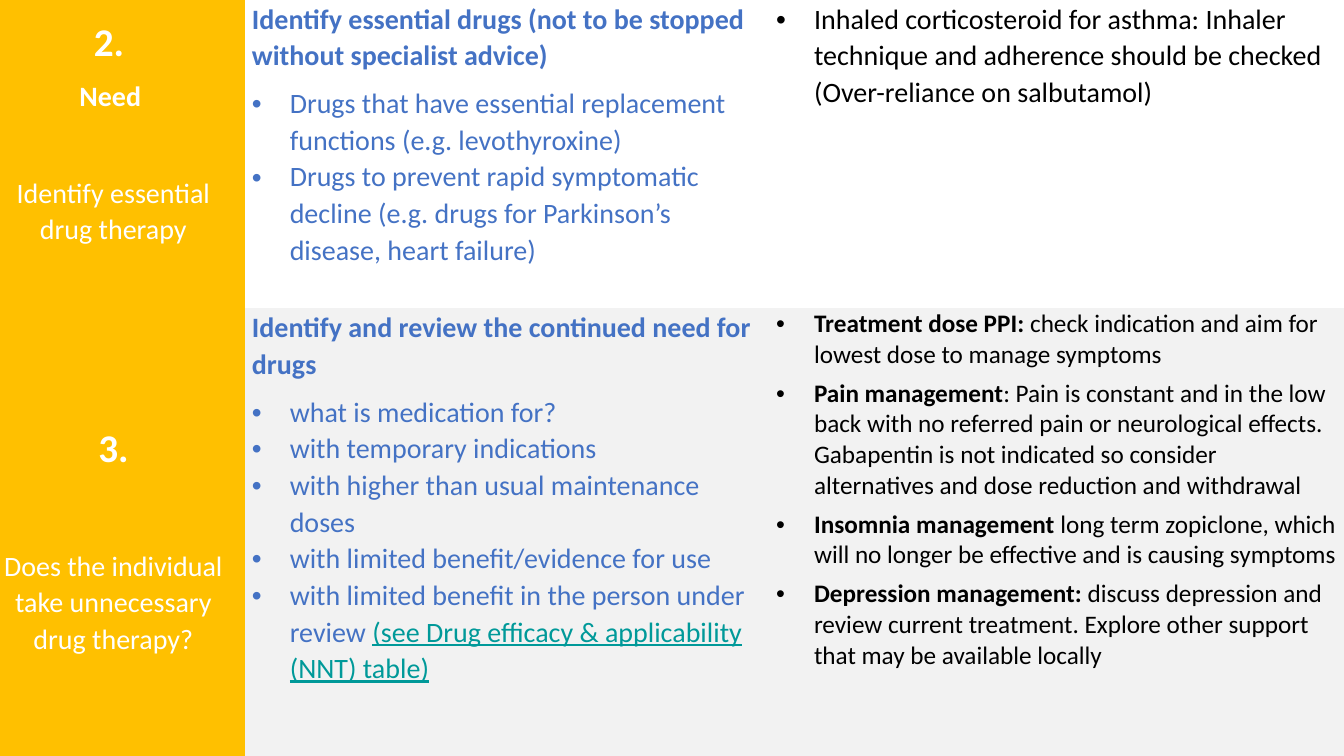
from dataclasses import dataclass
from lxml.etree import SubElement
from pptx import Presentation
from pptx.dml.color import RGBColor as RGB
from pptx.enum.text import PP_ALIGN as Align
from pptx.oxml.ns import qn
from pptx.util import Pt


@dataclass(frozen=True)
class Theme:
    font: str = "Calibri"
    gold: str = "FFC000"
    white: str = "FFFFFF"
    grey: str = "F2F2F2"
    blue: str = "4472C4"
    teal: str = "009999"
    black: str = "000000"
    number: int = 28
    body: int = 20
    detail: int = 18
    lead: float = 1.07
    hang: int = 27


THEME = Theme()
PLAIN_GRID = "{2D5ABB26-0587-4C30-8999-92F81FD0307C}"
WIDTHS = (188, 374.5, 411)
HEIGHTS = (220.3, 350.7)

STEPS = (
    (11.5, (("2. ", THEME.number, True, 7),
            ("Need ", THEME.body, True, 43),
            ("Identify essential drug therapy", THEME.body, False, 0))),
    (81, (("3.", THEME.number, True, 53),
          ("Does the individual take unnecessary drug therapy?", THEME.body, False, 0))),
)
ACTIONS = (
    ("Identify essential drugs (not to be stopped without specialist advice)",
     ("Drugs that have essential replacement functions (e.g. levothyroxine)",
      "Drugs to prevent rapid symptomatic decline (e.g. drugs for Parkinson’s disease, heart failure)"),
     None),
    ("Identify and review the continued need for drugs",
     ("what is medication for?",
      "with temporary indications",
      "with higher than usual maintenance doses",
      "with limited benefit/evidence for use",
      "with limited benefit in the person under review "),
     "(see Drug efficacy & applicability (NNT) table)"),
)
INHALER = ("Inhaled corticosteroid for asthma: Inhaler technique and adherence "
           "should be checked (Over-reliance on salbutamol)")
REVIEWS = (
    ("Treatment dose PPI: ", "check indication and aim for lowest dose to manage symptoms"),
    ("Pain management", ": Pain is constant and in the low back with no referred pain or "
     "neurological effects. Gabapentin is not indicated so consider alternatives and dose "
     "reduction and withdrawal"),
    ("Insomnia management ", "long term zopiclone, which will no longer be effective and is "
     "causing symptoms"),
    ("Depression management: ", "discuss depression and review current treatment. Explore "
     "other support that may be available locally"),
)


def add_table(slide):
    frame = slide.shapes.add_table(2, 3, Pt(-13), Pt(0), Pt(sum(WIDTHS)), Pt(sum(HEIGHTS)))
    table = frame.table
    table.first_row = table.horz_banding = False
    table._tbl.tblPr.find(qn("a:tableStyleId")).text = PLAIN_GRID
    for column, width in zip(table.columns, WIDTHS):
        column.width = Pt(width)
    for row, height in zip(table.rows, HEIGHTS):
        row.height = Pt(height)
    return table


def style_cell(cell, color, top=0):
    cell.fill.solid()
    cell.fill.fore_color.rgb = RGB.from_string(color)
    cell.margin_left = cell.margin_right = Pt(5)
    cell.margin_top, cell.margin_bottom = Pt(top), Pt(0)


def add_para(cell, first=False, lead=THEME.lead, before=0, after=0, align=Align.LEFT):
    frame = cell.text_frame
    para = frame.paragraphs[0] if first else frame.add_paragraph()
    para.alignment = align
    para.line_spacing = lead
    para.space_before = Pt(0 if first else before)
    para.space_after = Pt(after)
    return para


def add_bullet(cell, color, **spacing):
    para = add_para(cell, **spacing)
    props = para._p.get_or_add_pPr()
    props.set("marL", str(Pt(THEME.hang)))
    props.set("indent", str(-Pt(THEME.hang)))
    tint = SubElement(props, qn("a:buClr"))
    SubElement(tint, qn("a:srgbClr")).set("val", color)
    SubElement(props, qn("a:buFont")).set("typeface", "Arial")
    SubElement(props, qn("a:buChar")).set("char", "•")
    return para


def add_run(para, text, color, size=THEME.body, bold=False, line=False):
    run = para.add_run()
    run.text = text
    font = run.font
    font.name, font.size = THEME.font, Pt(size)
    font.bold, font.underline = bold, line
    font.color.rgb = RGB.from_string(color)


def fill_step(cell, top, lines):
    style_cell(cell, THEME.gold, top)
    for index, (text, size, bold, after) in enumerate(lines):
        para = add_para(cell, index == 0, after=after, align=Align.CENTER)
        add_run(para, text, THEME.white, size, bold)


def fill_action(cell, title, points, link):
    add_run(add_para(cell, True, after=8), title, THEME.blue, bold=True)
    for point in points:
        para = add_bullet(cell, THEME.blue)
        add_run(para, point, THEME.blue)
    if link:
        add_run(para, link, THEME.teal, line=True)


def fill_reviews(cell):
    for index, (topic, advice) in enumerate(REVIEWS):
        para = add_bullet(cell, THEME.black, first=index == 0, lead=1.0, before=5.8)
        add_run(para, topic, THEME.black, THEME.detail, True)
        add_run(para, advice, THEME.black, THEME.detail)


def main():
    deck = Presentation()
    deck.slide_width, deck.slide_height = Pt(960), Pt(540)
    slide = deck.slides.add_slide(deck.slide_layouts[6])
    table = add_table(slide)
    for row, color in enumerate((THEME.white, THEME.grey)):
        fill_step(table.cell(row, 0), *STEPS[row])
        for column in (1, 2):
            style_cell(table.cell(row, column), color)
        fill_action(table.cell(row, 1), *ACTIONS[row])
    add_run(add_bullet(table.cell(0, 2), THEME.black, first=True), INHALER, THEME.black)
    fill_reviews(table.cell(1, 2))
    deck.save("out.pptx")


if __name__ == "__main__":
    main()
